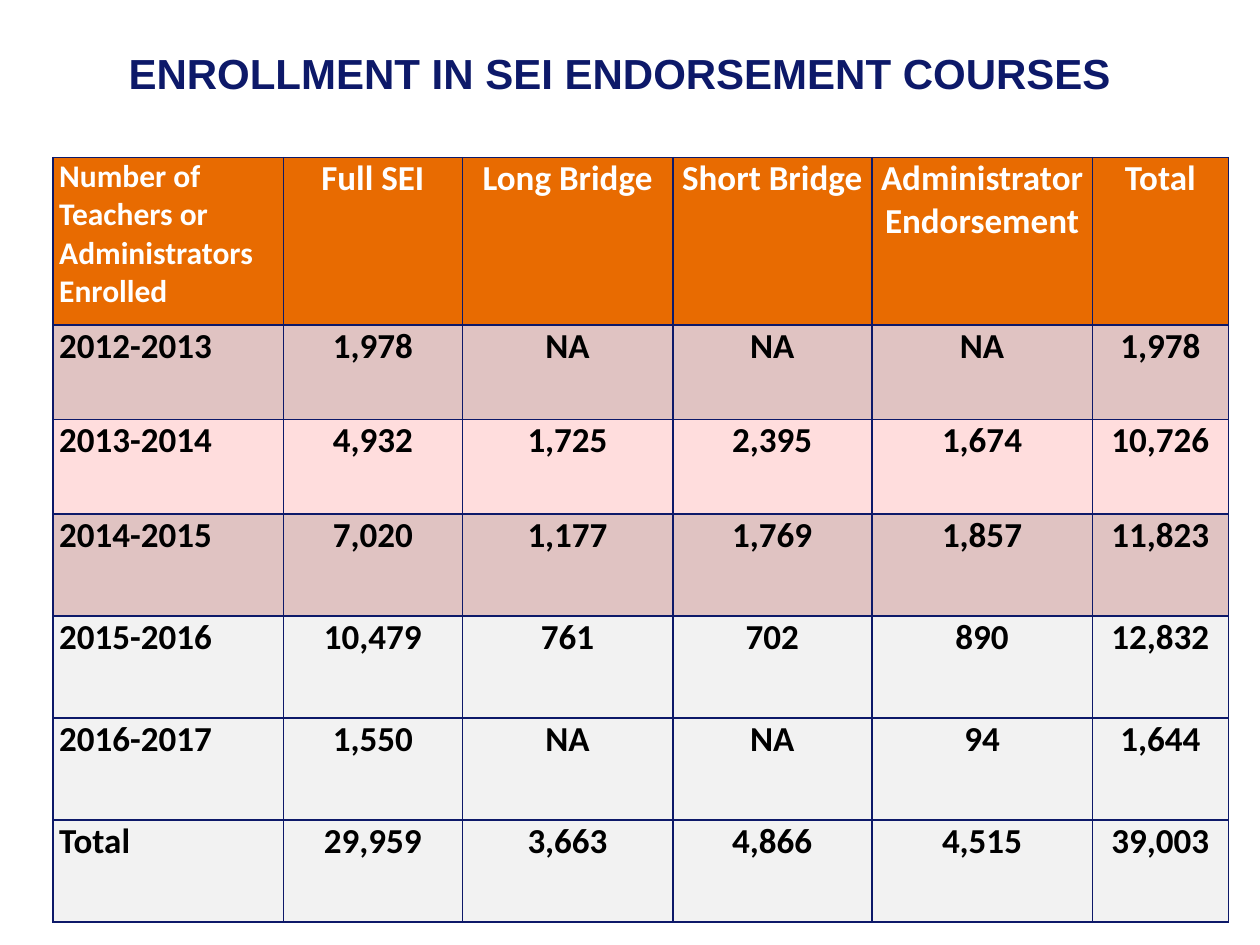
from lxml import etree
from pptx import Presentation
from pptx import util as u
from pptx.dml.color import RGBColor
from pptx.enum import text as t
from pptx.oxml import ns

NAVY = RGBColor(0x0D, 0x19, 0x69)
ORANGE = RGBColor(0xE8, 0x6B, 0x01)
ROSE = RGBColor(0xE0, 0xC3, 0xC2)
PINK = RGBColor(0xFF, 0xDD, 0xDD)
GREY = RGBColor(0xF2, 0xF2, 0xF2)
WHITE = RGBColor(255, 255, 255)
BLACK = RGBColor(0, 0, 0)

TITLE = "ENROLLMENT IN SEI ENDORSEMENT COURSES"
HEAD = ["Number of\nTeachers or Administrators\nEnrolled", "Full SEI", "Long Bridge",
        "Short Bridge", "Administrator Endorsement", "Total"]
ROWS = [
    (HEAD, ORANGE, 1.33),
    (["2012-2013", "1,978", "NA", "NA", "NA", "1,978"], ROSE, 0.75),
    (["2013-2014", "4,932", "1,725", "2,395", "1,674", "10,726"], PINK, 0.75),
    (["2014-2015", "7,020", "1,177", "1,769", "1,857", "11,823"], ROSE, 0.81),
    (["2015-2016", "10,479", "761", "702", "890", "12,832"], GREY, 0.81),
    (["2016-2017", "1,550", "NA", "NA", "94", "1,644"], GREY, 0.81),
    (["Total", "29,959", "3,663", "4,866", "4,515", "39,003"], GREY, 0.81),
]
COLS = [1.83, 1.42, 1.67, 1.58, 1.75, 1.08]
INSETS = {"margin_left": u.Inches(0.05), "margin_right": u.Inches(0.05),
          "margin_top": 0, "margin_bottom": 0}


def apply(item, values):
    for name, value in values.items():
        setattr(item, name, value)


def style(par, face, size, color, align):
    par.alignment = align
    apply(par.font, {"name": face, "size": u.Pt(size), "bold": True})
    par.font.color.rgb = color


def border(cell):
    props = cell._tc.get_or_add_tcPr()
    for i, side in enumerate(("lnL", "lnR", "lnT", "lnB")):
        line = etree.Element(ns.qn("a:" + side), w=str(u.Pt(1)))
        fill = etree.SubElement(line, ns.qn("a:solidFill"))
        etree.SubElement(fill, ns.qn("a:srgbClr"), val=str(NAVY))
        props.insert(i, line)


def add_title(slide):
    box = slide.shapes.title
    apply(box, {"left": u.Inches(0.92), "top": u.Inches(0.33),
                "width": u.Inches(8.07), "height": u.Inches(0.5)})
    frame = box.text_frame
    frame.text = TITLE
    apply(frame, {"word_wrap": False, "vertical_anchor": t.MSO_ANCHOR.MIDDLE,
                  "auto_size": t.MSO_AUTO_SIZE.SHAPE_TO_FIT_TEXT})
    style(frame.paragraphs[0], "Arial", 24, NAVY, t.PP_ALIGN.LEFT)


def add_grid(slide):
    high = sum(row[2] for row in ROWS)
    grid = slide.shapes.add_table(
        len(ROWS), len(COLS), u.Inches(0.42), u.Inches(1.25),
        u.Inches(sum(COLS)), u.Inches(high)).table
    for col, width in zip(grid.columns, COLS):
        col.width = u.Inches(width)
    for r, (words, fill, height) in enumerate(ROWS):
        grid.rows[r].height = u.Inches(height)
        for c, word in enumerate(words):
            cell = grid.cell(r, c)
            cell.text = word
            apply(cell, INSETS)
            cell.fill.solid()
            cell.fill.fore_color.rgb = fill
            border(cell)
            for par in cell.text_frame.paragraphs:
                style(par, "Calibri", 18 if r == c == 0 else 20,
                      BLACK if r else WHITE,
                      t.PP_ALIGN.CENTER if c else t.PP_ALIGN.LEFT)


def main():
    deck = Presentation()
    apply(deck, {"slide_width": u.Inches(10), "slide_height": u.Inches(7.5)})
    slide = deck.slides.add_slide(deck.slide_layouts[5])
    add_grid(slide)
    add_title(slide)
    deck.save("out.pptx")


if __name__ == "__main__":
    main()
